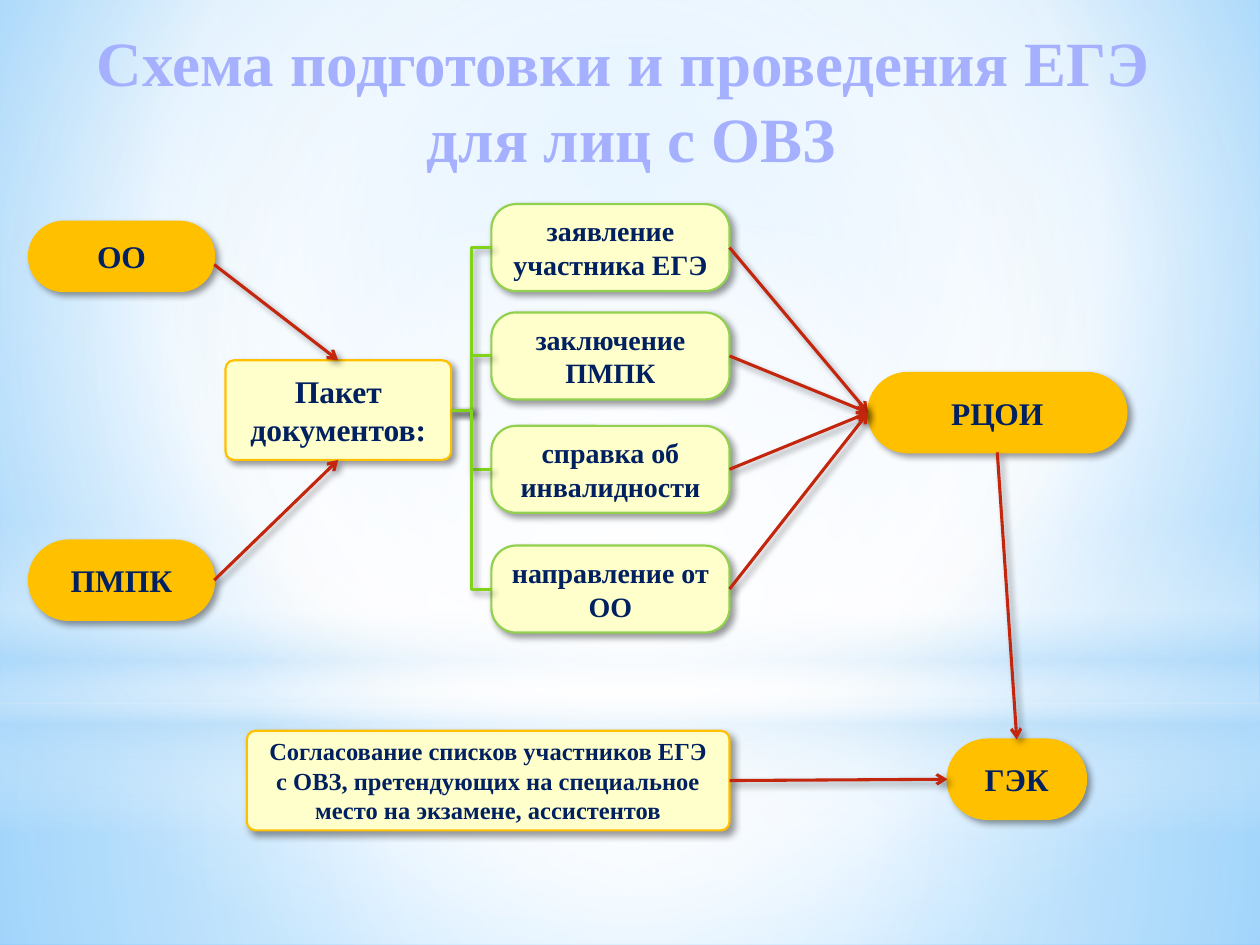
"""Builds a one-slide flowchart of exam preparation for participants with special needs."""
import pptx
import pptx.dml.color
import pptx.enum.shapes
import pptx.enum.text
import pptx.oxml
import pptx.oxml.ns
import pptx.util
from pptx.util import Inches

FONT = "Times New Roman"
color = pptx.dml.color.RGBColor.from_string
shape_kind = pptx.enum.shapes.MSO_SHAPE
connector_kind = pptx.enum.shapes.MSO_CONNECTOR
TOP, LEFT, BOTTOM, RIGHT = range(4)


def gradient(stops, focus=None):
    marks = "".join(
        f'<a:gs pos="{pos * 1000}"><a:srgbClr val="{rgb}"><a:alpha val="{alpha * 1000}"/></a:srgbClr></a:gs>'
        for pos, rgb, alpha in stops
    )
    direction = '<a:lin ang="5400000" scaled="0"/>'
    if focus:
        sides = " ".join(f'{side}="{value * 1000}"' for side, value in zip("ltrb", focus))
        direction = f'<a:path path="circle"><a:fillToRect {sides}/></a:path>'
    return pptx.oxml.parse_xml(
        f'<a:gradFill {pptx.oxml.ns.nsdecls("a")} rotWithShape="1"><a:gsLst>{marks}</a:gsLst>{direction}</a:gradFill>'
    )


def soft_shadow():
    return pptx.oxml.parse_xml(
        f'<a:effectLst {pptx.oxml.ns.nsdecls("a")}>'
        '<a:outerShdw blurRad="50800" dist="38100" dir="2700000" algn="tl" rotWithShape="0">'
        '<a:srgbClr val="000000"><a:alpha val="40000"/></a:srgbClr></a:outerShdw></a:effectLst>'
    )


prs = pptx.Presentation()
prs.slide_width, prs.slide_height = Inches(10), Inches(7.5)
slide = prs.slides.add_slide(prs.slide_layouts[6])

slide.background.fill.gradient()
sky = slide.element.find(".//" + pptx.oxml.ns.qn("p:bgPr"))
sky.replace(sky[0], gradient([(0, "9ED5FF", 100), (60, "FFFFFF", 100), (100, "5BB9FF", 100)], (20, 10, 20, 60)))

center = (50, 50, 50, 50)
glows = [
    (shape_kind.RECTANGLE, 5.58, 1.92, center, [(0, "FFFFFF", 91), (37, "FFFFFF", 76), (100, "B4DCFA", 79)]),
    (shape_kind.RECTANGLE, 0, 5.58, center, [(0, "FFFFFF", 89), (48, "FFFFFF", 62), (100, "B4DCFA", 79)]),
    (shape_kind.RECTANGLE, 4.12, 2.5, None, [(0, "FFFFFF", 0), (29, "FFFFFF", 30), (45, "B4DCFA", 40),
                                             (55, "FFFFFF", 26), (65, "B4DCFA", 60), (100, "FFFFFF", 0)]),
    (shape_kind.OVAL, 1.75, 5.58, center, [(0, "FFFFFF", 100), (56, "FFFFFF", 0)]),
]
for kind, top, height, focus, stops in glows:
    glow = slide.shapes.add_shape(kind, 0, Inches(top), Inches(10), Inches(height))
    glow.shadow.inherit = False
    glow.line.fill.background()
    glow.fill.gradient()
    glow_fill = glow.element.spPr.find(pptx.oxml.ns.qn("a:gradFill"))
    glow.element.spPr.replace(glow_fill, gradient(stops, focus))

title = slide.shapes.add_textbox(Inches(0.51), Inches(0.14), Inches(9), Inches(1.31))
title.text_frame.word_wrap = True
heading = title.text_frame.paragraphs[0]
heading.alignment = pptx.enum.text.PP_ALIGN.CENTER
title_stops = [(0, "BCC4FF", 100), (9, "A5B0FF", 100), (50, "001C8A", 100), (79, "A5B0FF", 100), (100, "BCC4FF", 100)]
for index, words in enumerate(["Схема подготовки и проведения ЕГЭ ", "для лиц с ОВЗ"]):
    if index:
        heading.add_line_break()
    run = heading.add_run()
    run.text = words
    run.font.size, run.font.bold, run.font.name = pptx.util.Pt(36), True, FONT
    outline = pptx.oxml.parse_xml(
        f'<a:ln {pptx.oxml.ns.nsdecls("a")} w="10541"><a:solidFill><a:srgbClr val="445EC3"/></a:solidFill></a:ln>'
    )
    for position, part in enumerate([outline, gradient(title_stops), soft_shadow()]):
        run.font._element.insert(position, part)

organization = ("FFC000", "FFC000", 0.5, 18)
package = ("FFFFCC", "FFC000", 0.084, 18)
document = ("FFFFCC", "92D050", 0.284, 16)
agreement = ("FFFFCC", "FFC000", 0.084, 14)
steps = [
    ("school", "ОО", 0.23, 1.76, 1.47, 0.55, organization),
    ("commission", "ПМПК", 0.23, 4.29, 1.47, 0.63, organization),
    ("package", "Пакет документов:", 1.79, 2.86, 1.79, 0.79, package),
    ("application", "заявление участника ЕГЭ", 3.9, 1.62, 1.89, 0.69, document),
    ("conclusion", "заключение ПМПК", 3.9, 2.48, 1.89, 0.69, document),
    ("certificate", "справка об инвалидности", 3.9, 3.38, 1.89, 0.69, document),
    ("referral", "направление от ОО", 3.9, 4.33, 1.89, 0.69, document),
    ("center", "РЦОИ", 6.89, 2.96, 2.05, 0.63, organization),
    ("board", "ГЭК", 7.52, 5.87, 1.1, 0.63, organization),
    ("agreement", "Согласование списков участников ЕГЭ с ОВЗ, претендующих на специальное место на экзамене, ассистентов",
     1.96, 5.8, 3.83, 0.79, agreement),
]
boxes = {}
for key, words, left, top, width, height, (fill, border, rounding, size) in steps:
    box = slide.shapes.add_shape(
        shape_kind.ROUNDED_RECTANGLE, Inches(left), Inches(top), Inches(width), Inches(height))
    box.adjustments[0] = rounding
    box.fill.solid()
    box.fill.fore_color.rgb = color(fill)
    box.line.color.rgb = color(border)
    box.line.width = pptx.util.Pt(1.25)
    box.element.spPr.append(soft_shadow())
    box.text_frame.word_wrap = True
    box.text_frame.vertical_anchor = pptx.enum.text.MSO_ANCHOR.MIDDLE
    paragraph = box.text_frame.paragraphs[0]
    paragraph.alignment = pptx.enum.text.PP_ALIGN.CENTER
    run = paragraph.add_run()
    run.text = words
    run.font.size, run.font.bold, run.font.name = pptx.util.Pt(size), True, FONT
    run.font.color.rgb = color("002060")
    boxes[key] = box

documents = ["application", "conclusion", "certificate", "referral"]
arrow = (connector_kind.STRAIGHT, "C3260C")
bracket = (connector_kind.ELBOW, "81D31A")
links = [
    (None, RIGHT, "package", TOP, arrow),
    ("commission", RIGHT, "package", BOTTOM, arrow),
    ("center", BOTTOM, "board", TOP, arrow),
    ("agreement", RIGHT, "board", LEFT, arrow),
]
links += [("package", RIGHT, key, LEFT, bracket) for key in documents]
links += [(key, RIGHT, "center", LEFT, arrow) for key in documents]
for source, exit_side, target, entry_side, (kind, stroke) in links:
    link = slide.shapes.add_connector(kind, Inches(1.7), Inches(2.1), Inches(2.69), Inches(2.86))
    if source:
        link.begin_connect(boxes[source], exit_side)
    link.end_connect(boxes[target], entry_side)
    link.line.color.rgb = color(stroke)
    link.line.width = pptx.util.Pt(1.75)
    if kind == connector_kind.STRAIGHT:
        link.line._get_or_add_ln().append(
            pptx.oxml.parse_xml(f'<a:tailEnd {pptx.oxml.ns.nsdecls("a")} type="arrow"/>'))
    link._element.spPr.append(soft_shadow())

prs.save("out.pptx")
